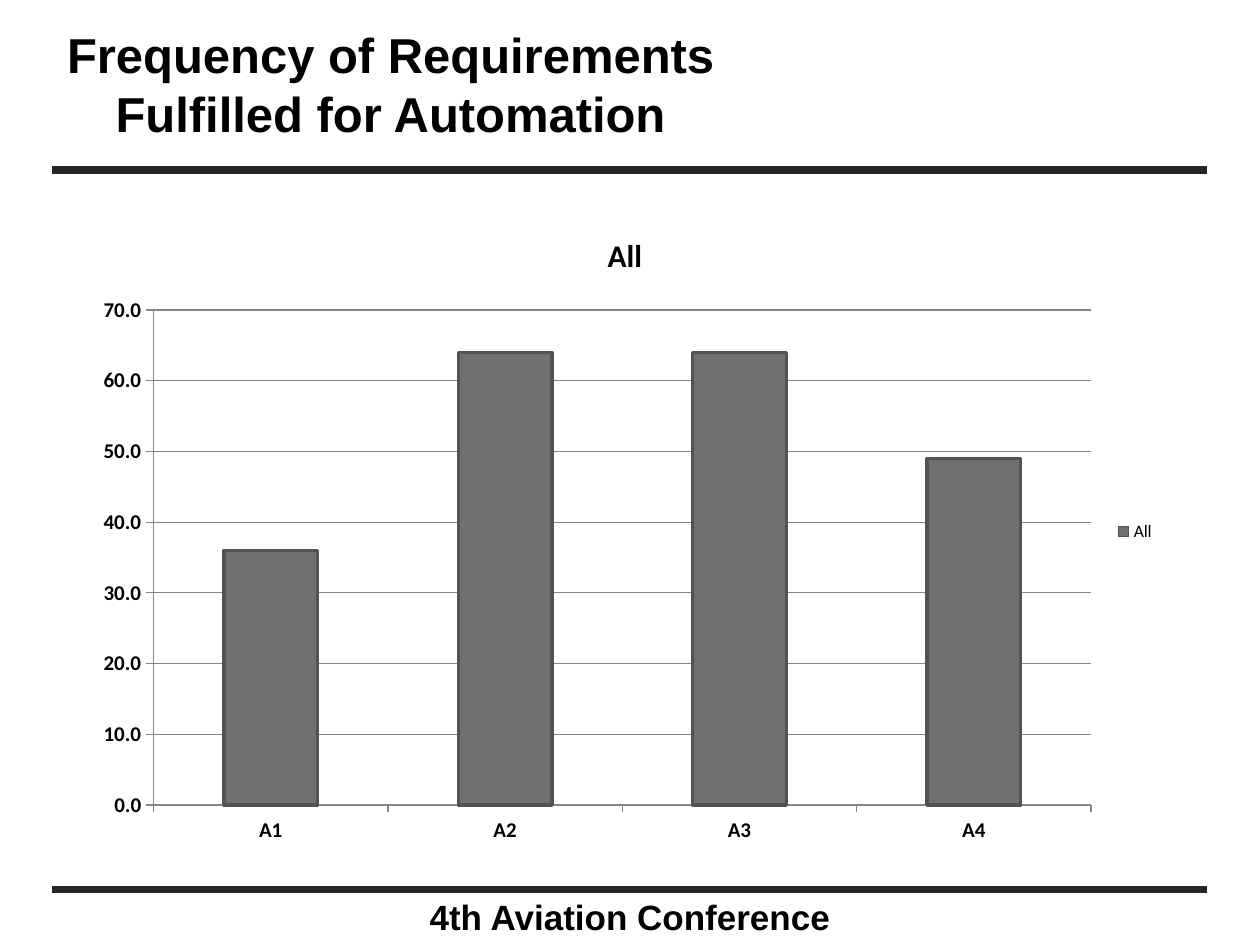
from lxml.etree import SubElement
from pptx import Presentation
from pptx.chart.data import CategoryChartData as Data
from pptx.dml.color import RGBColor as Rgb
from pptx.enum.chart import XL_CHART_TYPE as Kind, XL_LEGEND_POSITION as Side, XL_TICK_MARK as Tick
from pptx.enum.shapes import MSO_CONNECTOR as Link
from pptx.enum.text import MSO_ANCHOR as Anchor, MSO_AUTO_SIZE as Fit, PP_ALIGN as Align
from pptx.oxml.ns import qn
from pptx.util import Pt

HUES = {
    "text": "000000",
    "rule": "262626",
    "bar": "707070",
    "edge": "535353",
    "grid": "868686",
}


def hue(name):
    return Rgb.from_string(HUES[name])


def style(font, size, bold=False, face="Calibri"):
    font.name = face
    font.size = Pt(size)
    font.bold = bold
    font.color.rgb = hue("text")


def pen(line, name, width):
    line.color.rgb = hue(name)
    line.width = Pt(width)


def put_text(shape, text, size, anchor=Anchor.TOP, fit=Fit.NONE):
    frame = shape.text_frame
    frame.word_wrap = True
    frame.auto_size = fit
    frame.vertical_anchor = anchor
    frame.margin_left = frame.margin_right = Pt(3.6)
    frame.margin_top = frame.margin_bottom = Pt(3.6)
    para = frame.paragraphs[0]
    para.alignment = Align.CENTER
    para.space_before = Pt(0)
    run = para.add_run()
    run.text = text
    style(run.font, size, bold=True, face="Arial")


def add_title(slide, text):
    title = slide.shapes.title
    title.left, title.top = Pt(32.4), Pt(13.7)
    title.width, title.height = Pt(381.6), Pt(68.4)
    put_text(title, text, 28, anchor=Anchor.MIDDLE)


def add_rule(slide, y):
    rule = slide.shapes.add_connector(Link.STRAIGHT, Pt(30), Pt(y), Pt(690), Pt(y))
    pen(rule.line, "rule", 4.5)
    SubElement(rule._element.spPr, qn("a:effectLst"))


def add_foot(slide, text):
    box = slide.shapes.add_textbox(Pt(102), Pt(508.3), Pt(516), Pt(29.5))
    put_text(box, text, 20, fit=Fit.SHAPE_TO_FIT_TEXT)


def set_axis(axis):
    axis.major_tick_mark = Tick.OUTSIDE
    axis.minor_tick_mark = Tick.NONE
    style(axis.tick_labels.font, 12, bold=True)
    pen(axis.format.line, "grid", 0.75)


def add_bars(slide, name, cats, vals):
    data = Data()
    data.categories = cats
    data.add_series(name, vals)
    frame = slide.shapes.add_chart(
        Kind.COLUMN_CLUSTERED, Pt(46.8), Pt(118.8), Pt(620.6), Pt(370), data
    )
    chart = frame.chart
    style(chart.font, 10)

    chart.has_title = True
    head = chart.chart_title.text_frame
    head.text = name
    style(head.paragraphs[0].runs[0].font, 18, bold=True)

    chart.has_legend = True
    chart.legend.position = Side.RIGHT
    chart.legend.include_in_layout = False
    style(chart.legend.font, 10)

    set_axis(chart.category_axis)
    axis = chart.value_axis
    set_axis(axis)
    axis.minimum_scale, axis.maximum_scale, axis.major_unit = 0, 70, 10
    axis.tick_labels.number_format = "###0.0"
    axis.tick_labels.number_format_is_linked = False
    axis.has_major_gridlines = True
    pen(axis.major_gridlines.format.line, "grid", 0.75)

    plot = chart.plots[0]
    plot.gap_width = 150
    plot.vary_by_categories = False
    bars = plot.series[0].format
    bars.fill.solid()
    bars.fill.fore_color.rgb = hue("bar")
    pen(bars.line, "edge", 2)


def main():
    deck = Presentation()
    deck.slide_width, deck.slide_height = Pt(720), Pt(540)
    slide = deck.slides.add_slide(deck.slide_layouts[5])
    for y in (97.2, 508.3):
        add_rule(slide, y)
    add_foot(slide, "4th Aviation Conference")
    add_title(slide, "Frequency of Requirements Fulfilled for Automation")
    add_bars(slide, "All", ("A1", "A2", "A3", "A4"), (36, 64, 64, 49))
    deck.save("out.pptx")


if __name__ == "__main__":
    main()
